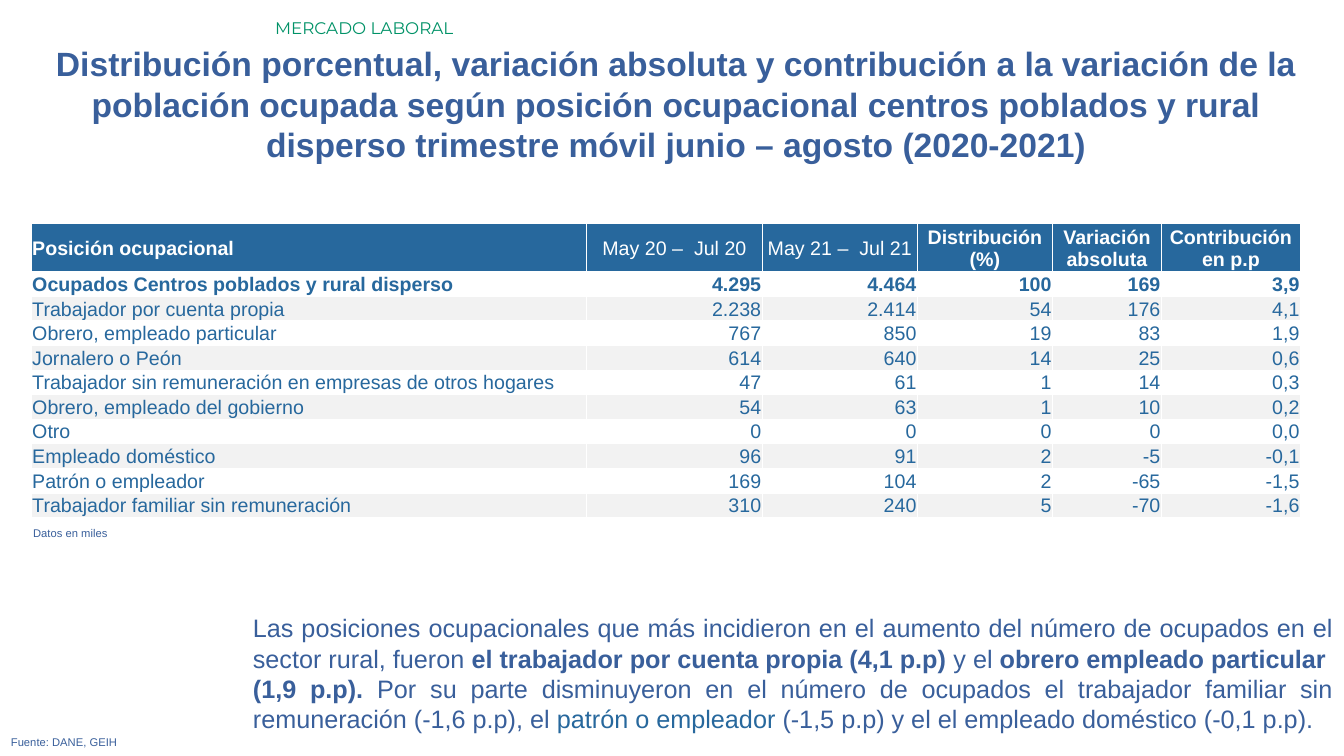
from pptx import Presentation
from pptx.dml.color import RGBColor
from pptx.enum.text import MSO_ANCHOR, MSO_AUTO_SIZE, PP_ALIGN
from pptx.util import Inches, Pt

COLORS = {"blue": "395F9B", "teal": "27689D", "green": "009267",
          "white": "FFFFFF", "band": "F2F2F2"}
WIDTHS = [5.51, 1.74, 1.54, 1.34, 1.08, 1.38]
ROWS = [
    ["Posición ocupacional", "May 20 –  Jul 20", "May 21 –  Jul 21",
     "Distribución (%)", "Variación absoluta", "Contribución en p.p"],
    ["Ocupados Centros poblados y rural disperso", "4.295", "4.464", "100", "169", "3,9"],
    ["Trabajador por cuenta propia", "2.238", "2.414", "54", "176", "4,1"],
    ["Obrero, empleado particular", "767", "850", "19", "83", "1,9"],
    ["Jornalero o Peón", "614", "640", "14", "25", "0,6"],
    ["Trabajador sin remuneración en empresas de otros hogares", "47", "61", "1", "14", "0,3"],
    ["Obrero, empleado del gobierno", "54", "63", "1", "10", "0,2"],
    ["Otro", "0", "0", "0", "0", "0,0"],
    ["Empleado doméstico", "96", "91", "2", "-5", "-0,1"],
    ["Patrón o empleador", "169", "104", "2", "-65", "-1,5"],
    ["Trabajador familiar sin remuneración", "310", "240", "5", "-70", "-1,6"],
]
TITLE = ("Distribución porcentual, variación absoluta y contribución a la variación "
         "de la población ocupada según posición ocupacional centros poblados y rural "
         "disperso trimestre móvil junio – agosto (2020-2021)")
NOTE = [
    ("Las posiciones ocupacionales que más incidieron en el aumento del número de "
     "ocupados en el sector rural, fueron ", False, "blue"),
    ("el trabajador por cuenta propia (4,1 p.p) ", True, "blue"),
    ("y el ", False, "blue"),
    ("obrero empleado particular  (1,9 p.p). ", True, "blue"),
    ("Por su parte disminuyeron en el número de ocupados el trabajador familiar sin "
     "remuneración (-1,6 p.p), el ", False, "blue"),
    ("patrón o empleador ", False, "teal"),
    ("(-1,5 p.p) y el el empleado doméstico (-0,1 p.p).", False, "blue"),
]


class Page:
    def __init__(self, deck):
        self.slide = deck.slides.add_slide(deck.slide_layouts[5])
        self.face = "Arial"

    def style(self, font, size, color, bold=False, face=None):
        font.name = face or self.face
        font.size = Pt(size)
        font.bold = bold
        font.color.rgb = RGBColor.from_string(COLORS[color])

    def title(self, text, box):
        shape = self.slide.shapes.title
        shape.left, shape.top, shape.width, shape.height = map(Inches, box)
        frame = shape.text_frame
        frame.text = text
        frame.word_wrap = True
        frame.auto_size = MSO_AUTO_SIZE.NONE
        frame.vertical_anchor = MSO_ANCHOR.TOP
        para = frame.paragraphs[0]
        para.alignment = PP_ALIGN.CENTER
        self.style(para.font, 24, "blue", True)

    def text(self, parts, box, size, align=PP_ALIGN.JUSTIFY, face=None):
        frame = self.slide.shapes.add_textbox(*map(Inches, box)).text_frame
        frame.word_wrap = True
        para = frame.paragraphs[0]
        para.alignment = align
        if len(parts) == 1:
            para.text, bold, color = parts[0]
            self.style(para.font, size, color, bold, face)
            return
        for words, bold, color in parts:
            run = para.add_run()
            run.text = words
            self.style(run.font, size, color, bold, face)

    def table(self, rows, widths, box):
        frame = self.slide.shapes.add_table(len(rows), len(widths), *map(Inches, box))
        grid = frame.table
        for col, width in zip(grid.columns, widths):
            col.width = Inches(width)
        for i, row in enumerate(rows):
            grid.rows[i].height = Inches(0.21 if i else 0.4)
            for j, text in enumerate(row):
                self.cell(grid.cell(i, j), text, i, j)

    def cell(self, cell, text, i, j):
        cell.margin_left = cell.margin_right = cell.margin_top = Inches(0.01)
        cell.margin_bottom = 0
        cell.vertical_anchor = MSO_ANCHOR.MIDDLE
        if i == 0 or i % 2 == 0:
            cell.fill.solid()
            cell.fill.fore_color.rgb = RGBColor.from_string(COLORS["band" if i else "teal"])
        else:
            cell.fill.background()
        cell.text = text
        para = cell.text_frame.paragraphs[0]
        if j:
            para.alignment = PP_ALIGN.RIGHT if i else PP_ALIGN.CENTER
        bold = i == 1 or (i == 0 and j not in (1, 2))
        self.style(para.font, 14, "teal" if i else "white", bold)


def main():
    deck = Presentation()
    deck.slide_width, deck.slide_height = Inches(13.33), Inches(7.5)
    page = Page(deck)
    page.title(TITLE, (0.45, 0.38, 12.51, 1.31))
    page.text([("MERCADO LABORAL", False, "green")], (2.63, 0.13, 10.7, 0.3), 12,
              PP_ALIGN.LEFT, "Montserrat")
    page.text(NOTE, (2.41, 6.03, 10.91, 1.31), 18)
    page.text([("Fuente: DANE, GEIH", False, "blue")], (0.01, 7.25, 12.91, 0.24), 8)
    page.table(ROWS, WIDTHS, (0.31, 2.22, 12.59, 2.91))
    page.text([("Datos en miles", False, "blue")], (0.23, 5.17, 12.62, 0.24), 8)
    deck.save("out.pptx")


if __name__ == "__main__":
    main()
